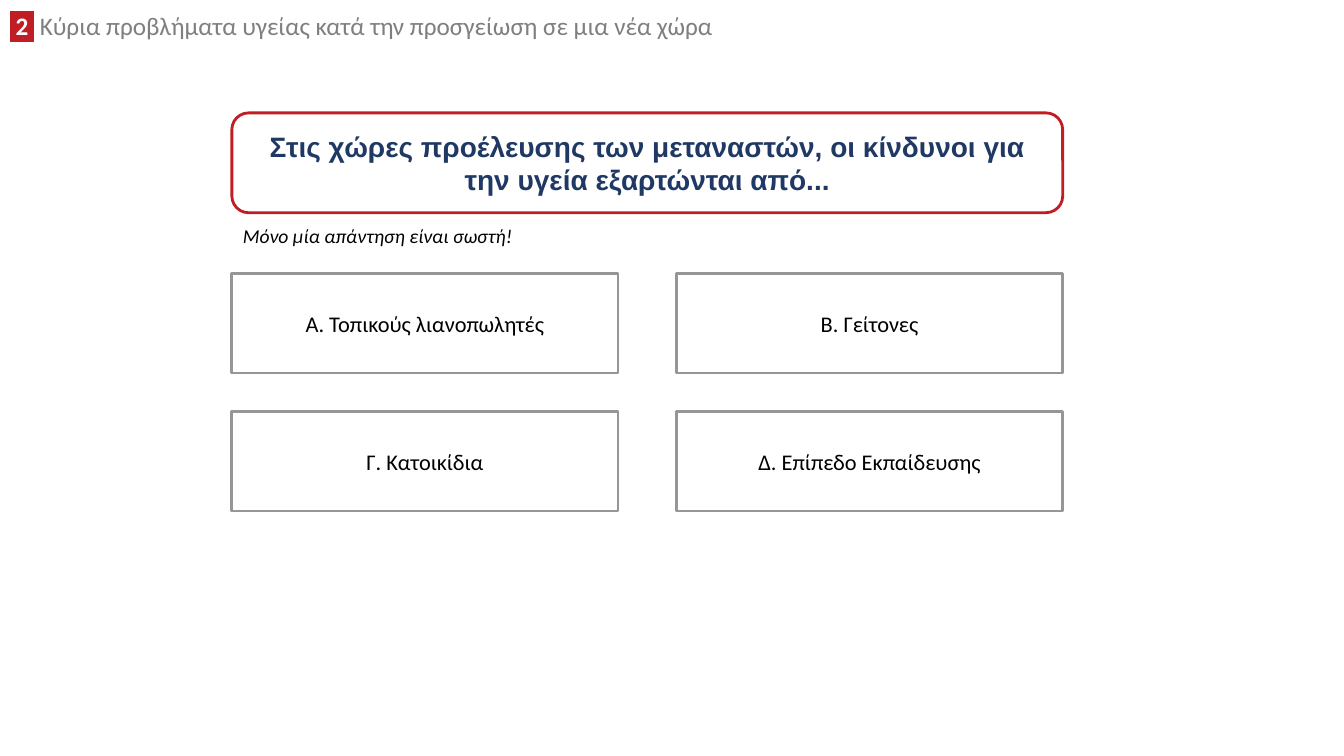
from lxml import etree
from pptx import Presentation
from pptx.dml.color import RGBColor
from pptx.enum.shapes import MSO_SHAPE
from pptx.enum.text import MSO_ANCHOR, MSO_AUTO_SIZE, PP_ALIGN
from pptx.oxml.ns import qn
from pptx.util import Inches, Pt

NUMBER = " 2 "
TITLE = " Κύρια προβλήματα υγείας κατά την προσγείωση σε μια νέα χώρα"
QUESTION = ("Στις χώρες προέλευσης των μεταναστών, οι κίνδυνοι για "
            "την υγεία εξαρτώνται από...")
HINT = "Μόνο μία απάντηση είναι σωστή!"
ANSWERS = [
    "Α. Τοπικούς λιανοπωλητές",
    "Β. Γείτονες",
    "Γ. Κατοικίδια",
    "Δ. Επίπεδο Εκπαίδευσης",
]
COLORS = {
    "white": "FFFFFF",
    "black": "000000",
    "red": "C01E24",
    "navy": "203864",
    "gray": "7F7F7F",
    "border": "969696",
}
RECT = MSO_SHAPE.RECTANGLE
ROUND = MSO_SHAPE.ROUNDED_RECTANGLE
MIDDLE = MSO_ANCHOR.MIDDLE
CENTER = PP_ALIGN.CENTER
LEFT_ALIGN = PP_ALIGN.LEFT
GROW = MSO_AUTO_SIZE.SHAPE_TO_FIT_TEXT

LEFT, WIDTH, HEIGHT = 2.3, 8.24, 0.99
ASK_TOP, GRID_TOP = 1.12, 2.71
CELL_W = 3.83
STEP_X, STEP_Y = WIDTH - CELL_W, 1.37


def color(name):
    return RGBColor.from_string(COLORS[name])


def add_run(para, text, size, ink, face="Calibri", bold=False, italic=False):
    run = para.add_run()
    run.text = text
    font = run.font
    font.size, font.name = Pt(size), face
    font.bold, font.italic = bold, italic
    font.color.rgb = color(ink)
    return run


def mark(run, ink):
    fill = run.font._element.find(qn("a:solidFill"))
    light = etree.Element(qn("a:highlight"))
    etree.SubElement(light, qn("a:srgbClr"), val=COLORS[ink])
    fill.addnext(light)


def add_text(slide, *place):
    box = slide.shapes.add_textbox(*map(Inches, place))
    frame = box.text_frame
    frame.word_wrap = True
    frame.auto_size = GROW
    para = frame.paragraphs[0]
    para.alignment = LEFT_ALIGN
    return para


def add_box(slide, kind, place, edge):
    box = slide.shapes.add_shape(kind, *map(Inches, place))
    box.shadow.inherit = False
    box.fill.solid()
    box.fill.fore_color.rgb = color("white")
    box.line.color.rgb = color(edge)
    box.line.width = Pt(2)
    frame = box.text_frame
    frame.word_wrap = True
    frame.vertical_anchor = MIDDLE
    para = frame.paragraphs[0]
    para.alignment = CENTER
    return para


def main():
    deck = Presentation()
    deck.slide_width, deck.slide_height = Inches(13.33), Inches(7.5)
    slide = deck.slides.add_slide(deck.slide_layouts[6])

    head = add_text(slide, 0, 0.11, 8.31, 0.35)
    head.line_spacing = 0.8
    mark(add_run(head, NUMBER, 18, "white", bold=True), "red")
    add_run(head, TITLE, 18, "gray")

    ask = add_box(slide, ROUND, (LEFT, ASK_TOP, WIDTH, HEIGHT), "red")
    add_run(ask, QUESTION, 20, "navy", face="Arial", bold=True)

    hint = add_text(slide, 2.31, 2.17, 3.18, 0.34)
    add_run(hint, HINT, 14, "black", italic=True)

    for i, answer in enumerate(ANSWERS):
        row, col = divmod(i, 2)
        place = (LEFT + col * STEP_X, GRID_TOP + row * STEP_Y, CELL_W, HEIGHT)
        add_run(add_box(slide, RECT, place, "border"), answer, 16, "black")

    deck.save("out.pptx")


if __name__ == "__main__":
    main()
